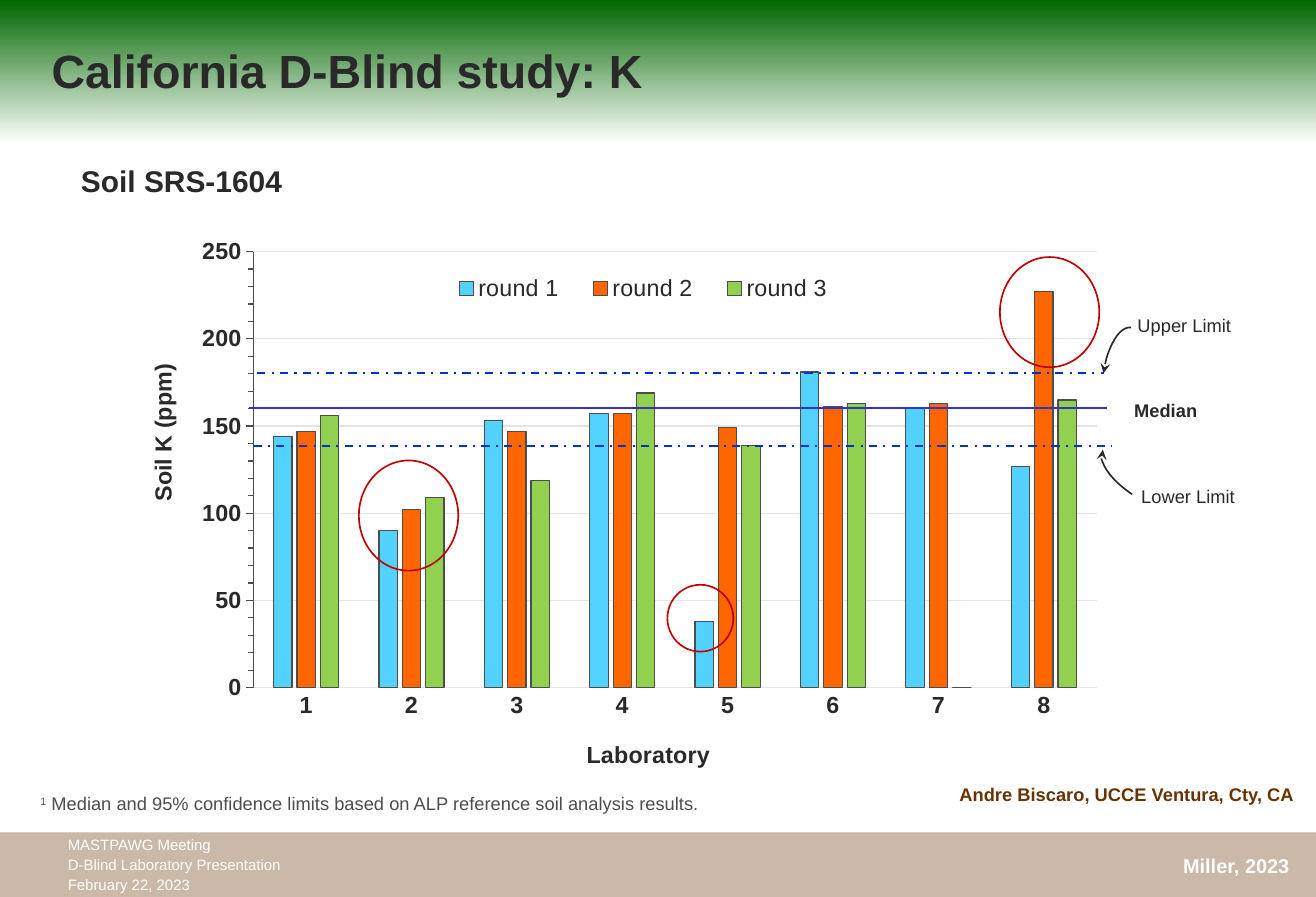
"""Build the California D-Blind potassium slide with its laboratory chart."""
from lxml.etree import SubElement
from pptx import Presentation
from pptx.chart.data import CategoryChartData
from pptx.dml.color import RGBColor
from pptx.enum.chart import XL_CHART_TYPE, XL_LEGEND_POSITION, XL_TICK_MARK
from pptx.enum.dml import MSO_LINE
from pptx.enum.shapes import MSO_CONNECTOR, MSO_SHAPE
from pptx.enum.text import MSO_ANCHOR, PP_ALIGN
from pptx.oxml import parse_xml
from pptx.oxml.ns import nsdecls, qn
from pptx.util import Cm, Pt

INK = RGBColor(0x29, 0x29, 0x29)
GRAY = RGBColor(0x4D, 0x4D, 0x4D)
PALE = RGBColor(0xE4, 0xE4, 0xE4)
WHITE = RGBColor(0xFF, 0xFF, 0xFF)
GREEN = RGBColor(0x00, 0x66, 0x00)
BROWN = RGBColor(0x66, 0x33, 0x00)
RED = RGBColor(0xC0, 0x00, 0x00)
BLUE = RGBColor(0x00, 0x33, 0xCC)
VIOLET = RGBColor(0x33, 0x33, 0xCC)
SKY = RGBColor(0x53, 0xD2, 0xFF)
ORANGE = RGBColor(0xFF, 0x66, 0x00)
LIME = RGBColor(0x92, 0xD0, 0x50)


def style(font, size, color, bold=False):
    font.name = "Arial"
    font.size = Pt(size)
    font.bold = bold
    font.color.rgb = color


def place(node, index, target, **spots):
    for old in node.findall(qn("c:layout")):
        node.remove(old)
    layout = parse_xml(f"<c:layout {nsdecls('c')}><c:manualLayout/></c:layout>")
    if target:
        SubElement(layout[0], qn("c:layoutTarget"), val=target)
    for key in ("x", "y"):
        SubElement(layout[0], qn(f"c:{key}Mode"), val="edge")
    for key, value in spots.items():
        SubElement(layout[0], qn(f"c:{key}"), val=str(value))
    node.insert(index, layout)


prs = Presentation()
prs.slide_width, prs.slide_height = Cm(27.94), Cm(19.05)
slide = prs.slides.add_slide(prs.slide_layouts[5])
shapes = slide.shapes

back = slide.background.fill
back.gradient()
back.gradient_angle = 270
for stop, color, spot in zip(back.gradient_stops, (GREEN, WHITE), (0, 0.16)):
    stop.color.rgb = color
    stop.position = spot

title = shapes.title
title.left, title.top, title.width, title.height = Cm(0.84), Cm(0.13), Cm(18.62), Cm(2.72)
frame = title.text_frame
frame.vertical_anchor = MSO_ANCHOR.MIDDLE
para = frame.paragraphs[0]
para.alignment = PP_ALIGN.LEFT
run = para.add_run()
run.text = "California D-Blind study: K"
style(run.font, 28, INK, True)

data = CategoryChartData()
data.categories = [str(lab) for lab in range(1, 9)]
data.add_series("round 1", (144, 90, 153, 157, 38, 181, 160, 127))
data.add_series("round 2", (147, 102, 147, 157, 149, 161, 163, 227))
data.add_series("round 3", (156, 109, 119, 169, 139, 163, 0, 165))
chart = shapes.add_chart(
    XL_CHART_TYPE.COLUMN_CLUSTERED, Cm(3.81), Cm(4.85), Cm(19.89), Cm(12.09), data
).chart
chart.has_title = False
style(chart.font, 14, GRAY)

plot = chart.plots[0]
plot.gap_width, plot.overlap = 219, -27
plot.vary_by_categories = False
for series, color in zip(plot.series, (SKY, ORANGE, LIME)):
    series.format.fill.solid()
    series.format.fill.fore_color.rgb = color
    series.format.line.color.rgb = GRAY
    series.format.line.width = Pt(0.75)

labs, ppm = chart.category_axis, chart.value_axis
for axis, color in ((labs, PALE), (ppm, GRAY)):
    style(axis.tick_labels.font, 14, INK, True)
    axis.format.line.color.rgb = color
    axis.format.line.width = Pt(0.75)
labs.major_tick_mark = XL_TICK_MARK.NONE
run = labs.axis_title.text_frame.paragraphs[0].add_run()
run.text = "Laboratory"
style(run.font, 14, INK, True)
ppm.minimum_scale, ppm.maximum_scale = 0, 250
ppm.major_unit, ppm.minor_unit = 50, 10
ppm.major_tick_mark = ppm.minor_tick_mark = XL_TICK_MARK.OUTSIDE
ppm.tick_labels.number_format = "0"
ppm.tick_labels.number_format_is_linked = False
ppm.major_gridlines.format.line.color.rgb = PALE
ppm.major_gridlines.format.line.width = Pt(0.75)

chart.has_legend = True
legend = chart.legend
legend.position = XL_LEGEND_POSITION.BOTTOM
legend.include_in_layout = False
style(legend.font, 14, INK)
root = chart._chartSpace
place(root.xpath(".//c:plotArea")[0], 0, "inner", x=0.079, y=0.041, w=0.9, h=0.766)
place(root.xpath(".//c:legend")[0], 1, None, x=0.27, y=0.07, w=0.45, h=0.07)
place(root.xpath(".//c:catAx/c:title")[0], 1, None, x=0.43, y=0.89)

band = shapes.add_shape(MSO_SHAPE.RECTANGLE, 0, Cm(17.68), Cm(27.94), Cm(1.37))
band.shadow.inherit = False
band.fill.solid()
band.fill.fore_color.rgb = BROWN
tint = band._element.spPr.find(qn("a:solidFill"))[0]
SubElement(tint, qn("a:alpha"), val="34000")
band.line.fill.background()

for x, end, y, color, width, dash in (
    (5.28, 23.5, 8.66, VIOLET, 1.5, MSO_LINE.SOLID),
    (5.38, 23.6, 9.47, BLUE, 1.25, MSO_LINE.DASH_DOT),
    (5.46, 23.44, 7.92, BLUE, 1.25, MSO_LINE.DASH_DOT),
):
    limit = shapes.add_connector(MSO_CONNECTOR.STRAIGHT, Cm(x), Cm(y), Cm(end), Cm(y))
    limit.line.color.rgb = color
    limit.line.width = Pt(width)
    limit.line.dash_style = dash
    SubElement(limit._element.spPr, qn("a:effectLst"))

for lines, x, y, w, h, size, color, bold, turn, space, wrap in (
    (["Soil K (ppm)"], 1.73, 8.74, 3.45, 0.86, 14, INK, True, 270, None, False),
    (["Soil SRS-1604"], 1.47, 3.33, 4.83, 1.02, 18, INK, True, 0, None, False),
    (["Miller, 2023"], 24.87, 18.01, 2.79, 0.76, 12, WHITE, True, 0, None, False),
    (
        ["MASTPAWG Meeting", "D-Blind Laboratory Presentation", "February 22, 2023"],
        1.19, 17.58, 5.26, 1.55, 9, WHITE, False, 0, 12, False,
    ),
    (["Median"], 23.83, 8.36, 1.85, 0.74, 11, INK, True, 0, None, False),
    (["Upper Limit"], 23.9, 6.55, 2.51, 0.74, 11, INK, False, 0, None, False),
    (["Lower Limit"], 23.98, 10.19, 2.51, 0.74, 11, INK, False, 0, None, False),
    (
        ["Andre Biscaro, UCCE Ventura, Cty, CA"],
        20.12, 16.13, 7.82, 0.99, 11, BROWN, True, 0, 24, True,
    ),
    (
        ["1| Median and 95% confidence limits based on ALP reference soil analysis results."],
        0.61, 16.71, 14.66, 0.74, 11, GRAY, False, 0, None, True,
    ),
):
    box = shapes.add_textbox(Cm(x), Cm(y), Cm(w), Cm(h))
    box.rotation = turn
    frame = box.text_frame
    frame.word_wrap = wrap
    for index, line in enumerate(lines):
        para = frame.add_paragraph() if index else frame.paragraphs[0]
        if space:
            para.line_spacing = Pt(space)
        parts = line.split("|")
        for part in parts:
            run = para.add_run()
            run.text = part
            style(run.font, size, color, bold)
        if len(parts) > 1:
            para.runs[0].font._element.set("baseline", "30000")

for kind, x, y, w, h, turn, color, tip in (
    (MSO_SHAPE.ARC, 22.83, 7.54, 2.08, 0.89, 277.7, INK, "headEnd"),
    (MSO_SHAPE.ARC, 23.24, 9.68, 2.08, 0.89, 213.6, INK, "tailEnd"),
    (MSO_SHAPE.OVAL, 7.62, 9.78, 2.11, 2.34, 0, RED, None),
    (MSO_SHAPE.OVAL, 21.23, 5.46, 2.11, 2.34, 0, RED, None),
    (MSO_SHAPE.OVAL, 14.17, 12.42, 1.4, 1.42, 0, RED, None),
):
    mark = shapes.add_shape(kind, Cm(x), Cm(y), Cm(w), Cm(h))
    mark.shadow.inherit = False
    mark.rotation = turn
    mark.fill.background()
    mark.line.color.rgb = color
    mark.line.width = Pt(1)
    if tip:
        SubElement(mark._element.spPr.find(qn("a:ln")), qn(f"a:{tip}"), type="stealth")

prs.save("out.pptx")
